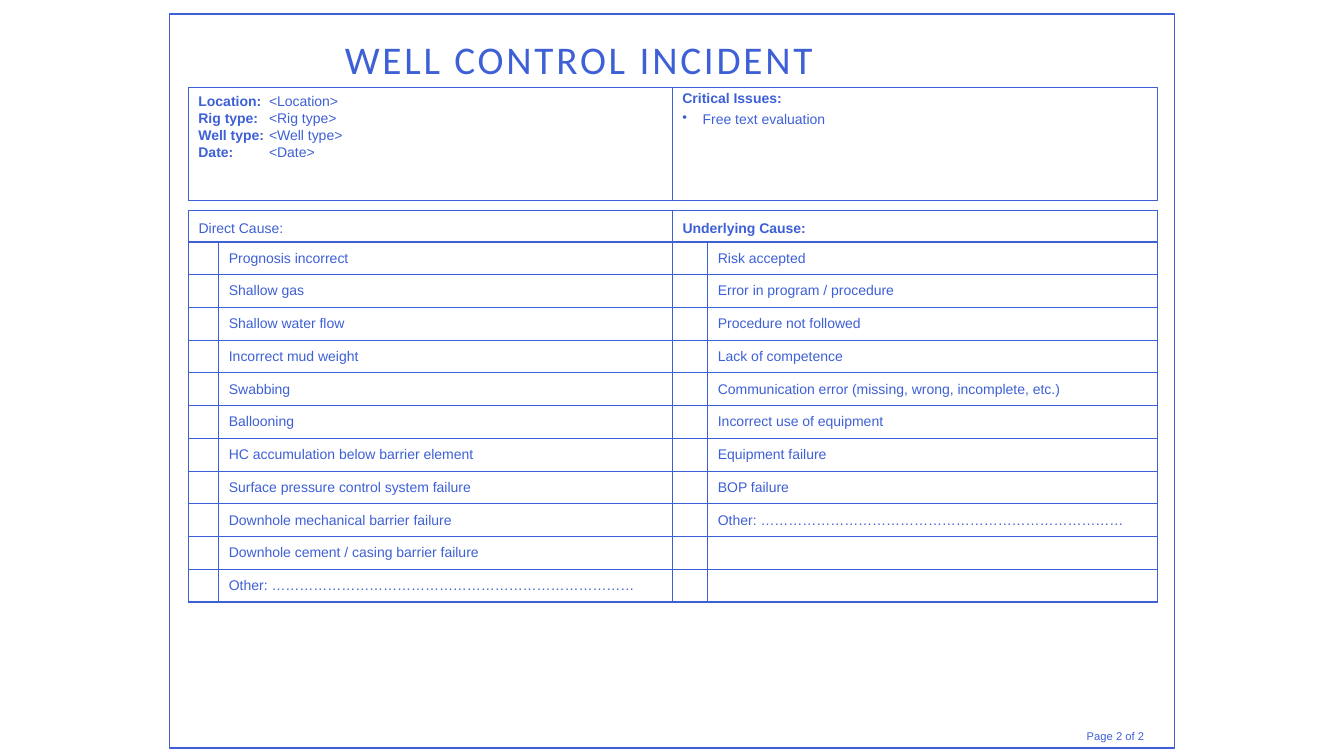
import itertools

import lxml.etree
import pptx
import pptx.dml.color
import pptx.enum.shapes
import pptx.enum.text
import pptx.oxml.ns
import pptx.util

Inches, Pt = pptx.util.Inches, pptx.util.Pt
qn = pptx.oxml.ns.qn
BLUE = pptx.dml.color.RGBColor(0x3E, 0x60, 0xD6)
WHITE = pptx.dml.color.RGBColor(0xFF, 0xFF, 0xFF)
MIDDLE = pptx.enum.text.MSO_ANCHOR.MIDDLE

LEFT, TOP = 1.87, 0.87
HEADER_HEIGHT = 1.12
CAUSES_TOP = TOP + HEADER_HEIGHT + 0.1
HEADING_ROW, CAUSE_ROW = 0.31, 0.325
COLUMNS = [0.3, 4.5, 0.35, 4.46]
HALF = sum(COLUMNS[:2])

DETAILS = [
    ("Location:", "<Location>"),
    ("Rig type:", "<Rig type>"),
    ("Well type:", "<Well type>"),
    ("Date:", "<Date>"),
]
OTHER = "Other: " + "…" * 22
DIRECT_CAUSES = [
    "Prognosis incorrect",
    "Shallow gas",
    "Shallow water flow",
    "Incorrect mud weight",
    "Swabbing",
    "Ballooning",
    "HC accumulation below barrier element",
    "Surface pressure control system failure",
    "Downhole mechanical barrier failure",
    "Downhole cement / casing barrier failure",
    "Other: ……………………………………………………………………",
]
UNDERLYING_CAUSES = [
    "Risk accepted",
    "Error in program / procedure",
    "Procedure not followed",
    "Lack of competence",
    "Communication error (missing, wrong, incomplete, etc.)",
    "Incorrect use of equipment",
    "Equipment failure",
    "BOP failure",
    "Other: ……………………………………………………………………",
]


def add_run(paragraph, text, size=10, bold=False, font="Arial"):
    run = paragraph.add_run()
    run.text = text
    run.font.name = font
    run.font.size = Pt(size)
    run.font.bold = bold
    run.font.color.rgb = BLUE
    return run


def add_panel(left, top, width, height):
    """Add a white, blue-edged rectangle and return its text frame."""
    panel = slide.shapes.add_shape(
        pptx.enum.shapes.MSO_SHAPE.RECTANGLE,
        Inches(left), Inches(top), Inches(width), Inches(height))
    panel.shadow.inherit = False
    panel.fill.solid()
    panel.fill.fore_color.rgb = WHITE
    panel.line.color.rgb = BLUE
    panel.line.width = Pt(1)
    panel.text_frame.vertical_anchor = pptx.enum.text.MSO_ANCHOR.TOP
    return panel.text_frame


deck = pptx.Presentation()
deck.slide_width, deck.slide_height = Inches(13.33), Inches(7.5)
slide = deck.slides.add_slide(deck.slide_layouts[6])
slide.background.fill.solid()
slide.background.fill.fore_color.rgb = WHITE

# Page frame and title
add_panel(1.68, 0.14, 9.97, 7.28)
title = slide.shapes.add_textbox(
    Inches(2.06), Inches(0.32), Inches(9.3), Inches(0.58)).text_frame
title.word_wrap = True
title.vertical_anchor = MIDDLE
title.margin_left = Inches(1.36)
title.paragraphs[0].line_spacing = 0.9
heading = add_run(title.paragraphs[0], "WELL CONTROL INCIDENT", 28, font="Calibri")
heading.font._element.set("spc", "200")

# Well details and critical issues
details = add_panel(LEFT, TOP, HALF, HEADER_HEIGHT)
issues = add_panel(LEFT + HALF, TOP, sum(COLUMNS[2:]), HEADER_HEIGHT)
for _ in DETAILS[1:]:
    details.add_paragraph()
issues.add_paragraph()
for paragraph in itertools.chain(details.paragraphs, issues.paragraphs):
    paragraph.alignment = pptx.enum.text.PP_ALIGN.LEFT
    properties = paragraph._p.get_or_add_pPr()
    properties.set("marL", str(Inches(0.2)))
    properties.set("indent", str(-Inches(0.2)))

for paragraph, (label, value) in zip(details.paragraphs, DETAILS):
    add_run(paragraph, label + "\t", bold=True)
    add_run(paragraph, value)

issues_heading, evaluation = issues.paragraphs
bullet_properties = evaluation._p.get_or_add_pPr()
bullet_color = lxml.etree.SubElement(bullet_properties, qn("a:buClr"))
lxml.etree.SubElement(bullet_color, qn("a:srgbClr")).set("val", str(BLUE))
lxml.etree.SubElement(bullet_properties, qn("a:buChar")).set("char", "•")
for paragraph in issues.paragraphs:
    paragraph.line_spacing = 0.8
    paragraph.space_after = Pt(4)
evaluation.space_before = Pt(1.5)
add_run(issues_heading, "Critical Issues:", bold=True)
add_run(evaluation, "Free text evaluation")

# Cause checklist
row_count = 1 + len(DIRECT_CAUSES)
causes = slide.shapes.add_table(
    row_count, len(COLUMNS), Inches(LEFT), Inches(CAUSES_TOP),
    Inches(sum(COLUMNS)), Inches(HEADING_ROW + CAUSE_ROW * len(DIRECT_CAUSES))).table
causes.first_row = causes.horz_banding = False
for column, width in zip(causes.columns, COLUMNS):
    column.width = Inches(width)
for row in causes.rows:
    row.height = Inches(CAUSE_ROW)
causes.rows[0].height = Inches(HEADING_ROW)

for cell in causes.iter_cells():
    cell.margin_top = cell.margin_bottom = 0
    cell.vertical_anchor = MIDDLE
    for side in ("a:lnL", "a:lnR", "a:lnT", "a:lnB"):
        border = lxml.etree.SubElement(cell._tc.get_or_add_tcPr(), qn(side))
        border.set("w", str(Pt(1)))
        stroke = lxml.etree.SubElement(border, qn("a:solidFill"))
        lxml.etree.SubElement(stroke, qn("a:srgbClr")).set("val", str(BLUE))
    cell.fill.background()

for first_column, label, bold, entries in (
        (0, "Direct Cause:", False, DIRECT_CAUSES),
        (2, "Underlying Cause:", True, UNDERLYING_CAUSES)):
    label_cell = causes.cell(0, first_column)
    label_cell.merge(causes.cell(0, first_column + 1))
    label_cell.margin_top = Inches(0.04)
    add_run(label_cell.text_frame.paragraphs[0], label, bold=bold)
    for row_index, entry in enumerate(entries, start=1):
        entry_cell = causes.cell(row_index, first_column + 1)
        add_run(entry_cell.text_frame.paragraphs[0], entry)

# Page number
page = slide.shapes.add_textbox(
    Inches(10.68), Inches(7.19), Inches(0.78), Inches(0.24)).text_frame
page.word_wrap = False
add_run(page.paragraphs[0], "Page 2 of 2", 8)

deck.save("out.pptx")
